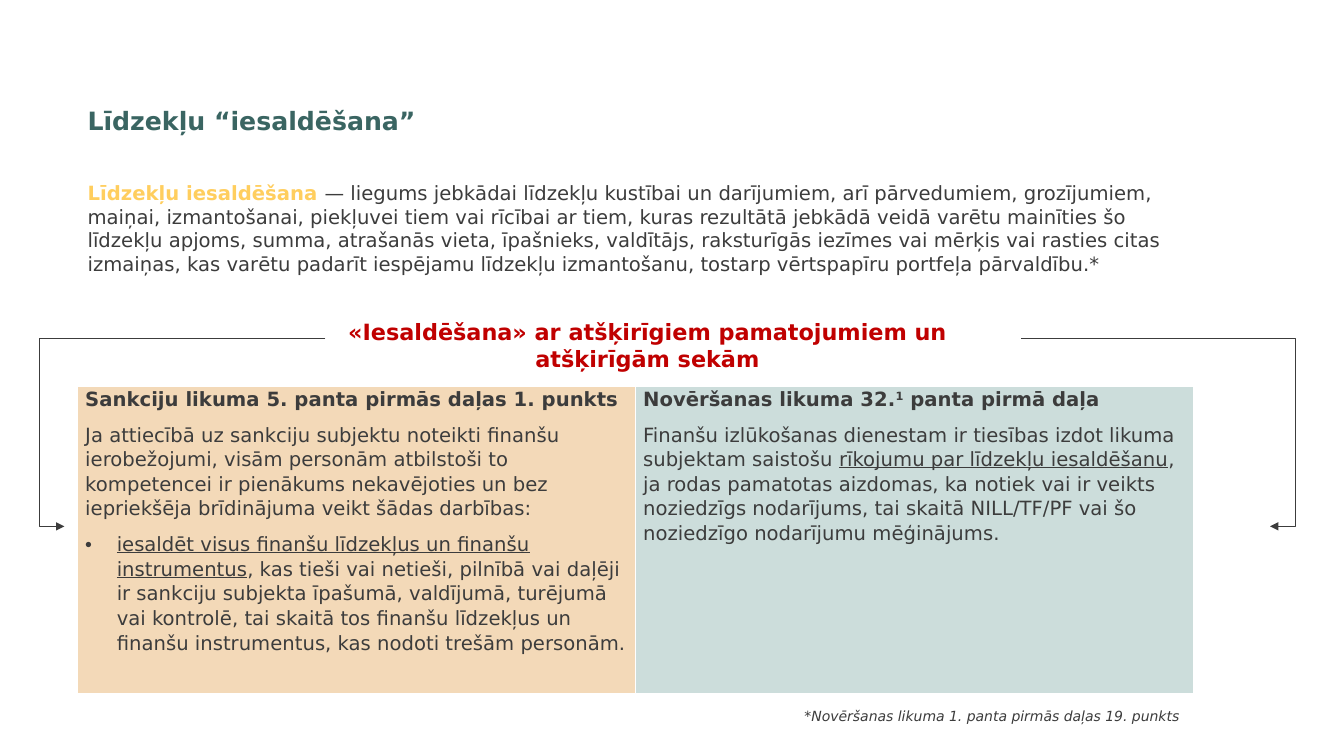
from lxml import etree
from pptx import Presentation
from pptx.dml.color import RGBColor
from pptx.enum import shapes, text
from pptx.oxml import ns
from pptx.util import Pt

FONT = "DejaVu Sans"
GREEN = RGBColor(0x3A, 0x65, 0x62)
YELLOW = RGBColor(0xFF, 0xCE, 0x5E)
GREY = RGBColor(0x3C, 0x3C, 0x3C)
RED = RGBColor(0xC0, 0x00, 0x00)
SAND = RGBColor(0xF3, 0xD9, 0xB8)
MINT = RGBColor(0xCC, 0xDD, 0xDB)
WHITE = RGBColor(0xFF, 0xFF, 0xFF)

SANCTIONS_LAW = [
    [("Sankciju likuma 5. panta pirmās daļas 1. punkts", {"bold": True})],
    [("Ja attiecībā uz sankciju subjektu noteikti finanšu ierobežojumi, visām personām "
      "atbilstoši to kompetencei ir pienākums nekavējoties un bez iepriekšēja brīdinājuma "
      "veikt šādas darbības:", {})],
    [("iesaldēt visus finanšu līdzekļus un finanšu instrumentus", {"underline": True}),
     (", kas tieši vai netieši, pilnībā vai daļēji ir sankciju subjekta īpašumā, valdījumā, "
      "turējumā vai kontrolē, tai skaitā tos finanšu līdzekļus un finanšu instrumentus, "
      "kas nodoti trešām personām.", {})],
]
PREVENTION_LAW = [
    [("Novēršanas likuma 32.", {"bold": True}),
     ("1", {"bold": True, "raised": True}),
     (" panta pirmā daļa", {"bold": True})],
    [("Finanšu izlūkošanas dienestam ir tiesības izdot likuma subjektam saistošu ", {}),
     ("rīkojumu par līdzekļu iesaldēšanu", {"underline": True}),
     (", ja rodas pamatotas aizdomas, ka notiek vai ir veikts noziedzīgs nodarījums, "
      "tai skaitā NILL/TF/PF vai šo noziedzīgo nodarījumu mēģinājums.", {})],
]


def add_element(parent, tag, **attributes):
    """Append a DrawingML element and return it."""
    return etree.SubElement(parent, ns.qn(tag), attributes)


def write(paragraph, words, size=14, color=GREY, bold=False, italic=False,
          underline=False, raised=False):
    """Add formatted words to a paragraph."""
    run = paragraph.add_run()
    run.text = words
    font = run.font
    font.name, font.size = FONT, Pt(size)
    font.bold, font.italic, font.underline = bold, italic, underline
    font.color.rgb = color
    if raised:
        run._r.get_or_add_rPr().set("baseline", "30000")


def text_area(slide, left, top, width, height, align=text.PP_ALIGN.LEFT):
    """Place a wrapping text box and return its first paragraph."""
    frame = slide.shapes.add_textbox(Pt(left), Pt(top), Pt(width), Pt(height)).text_frame
    frame.word_wrap = True
    paragraph = frame.paragraphs[0]
    paragraph.alignment = align
    return paragraph


def definition(slide, left, top, width):
    """Place the slide title and the definition below it."""
    title = text_area(slide, left, top, width, 65)
    title.line_spacing = 0.9
    write(title, "Līdzekļu “iesaldēšana”", size=18, color=GREEN, bold=True)
    meaning = text_area(slide, left, top + 51.8, width, 75)
    write(meaning, "Līdzekļu iesaldēšana ", color=YELLOW, bold=True)
    write(meaning, "— liegums jebkādai līdzekļu kustībai un darījumiem, arī pārvedumiem, "
          "grozījumiem, maiņai, izmantošanai, piekļuvei tiem vai rīcībai ar tiem, kuras "
          "rezultātā jebkādā veidā varētu mainīties šo līdzekļu apjoms, summa, atrašanās "
          "vieta, īpašnieks, valdītājs, raksturīgās iezīmes vai mērķis vai rasties citas "
          "izmaiņas, kas varētu padarīt iespējamu līdzekļu izmantošanu, tostarp "
          "vērtspapīru portfeļa pārvaldību.*")


def law_cell(cell, paragraphs, fill, bulleted=()):
    """Fill one table cell with the text of a law."""
    cell.fill.solid()
    cell.fill.fore_color.rgb = fill
    cell.margin_left = cell.margin_right = Pt(5.4)
    cell.margin_top = cell.margin_bottom = 0
    frame = cell.text_frame
    for index, pieces in enumerate(paragraphs):
        paragraph = frame.add_paragraph() if index else frame.paragraphs[0]
        if index in bulleted:
            properties = paragraph._p.get_or_add_pPr()
            properties.set("marL", str(Pt(22.5)))
            properties.set("indent", str(Pt(-22.5)))
            add_element(properties, "a:buFont", typeface="Arial")
            add_element(properties, "a:buChar", char="•")
        paragraph.line_spacing = 1.07
        paragraph.space_after = Pt(8)
        for words, style in pieces:
            write(paragraph, words, **style)
    cell_properties = cell._tc.get_or_add_tcPr()
    for position, (side, weight) in enumerate([("L", 1), ("R", 1), ("T", 1), ("B", 3)]):
        border = etree.Element(ns.qn(f"a:ln{side}"), w=str(Pt(weight)))
        add_element(add_element(border, "a:solidFill"), "a:srgbClr", val=str(WHITE))
        cell_properties.insert(position, border)


def law_table(slide, left, top, width, height):
    """Place the two laws side by side."""
    table = slide.shapes.add_table(1, 2, Pt(left), Pt(top), Pt(width), Pt(height)).table
    table.first_row = table.horz_banding = False
    law_cell(table.cell(0, 0), SANCTIONS_LAW, SAND, bulleted=(2,))
    law_cell(table.cell(0, 1), PREVENTION_LAW, MINT)


def side_arrow(slide, start, end, top, bottom, overshoot):
    """Bend an arrow from the heading round to the side of the table."""
    arrow = slide.shapes.add_connector(
        shapes.MSO_CONNECTOR.ELBOW, Pt(start), Pt(top), Pt(end), Pt(bottom))
    arrow.line.color.rgb = GREY
    arrow.line.width = Pt(0.5)
    add_element(arrow.line._get_or_add_ln(), "a:tailEnd", type="triangle")
    properties = arrow._element.spPr
    add_element(properties, "a:effectLst")
    bend = round(100000 * (1 + overshoot / abs(end - start)))
    guides = properties.find(ns.qn("a:prstGeom")).get_or_add_avLst()
    add_element(guides, "a:gd", name="adj1", fmla=f"val {bend}")


def comparison(slide, left, top, width, height):
    """Place the heading, the laws, the arrows and the footnote."""
    law_table(slide, left, top, width, height)
    footnote = text_area(slide, left + width - 358.6, top + height + 6, 358.6, 20,
                         text.PP_ALIGN.RIGHT)
    write(footnote, "*Novēršanas likuma 1. panta pirmās daļas 19. punkts ",
          size=10, italic=True)
    for start, end in ((232.5, 46), (729.4, 907.2)):
        side_arrow(slide, start, end, top - 34.6, top + 100, overshoot=18)
    heading = text_area(slide, left + 167, top - 52, 480, 46, text.PP_ALIGN.CENTER)
    write(heading, "«Iesaldēšana» ar atšķirīgiem pamatojumiem un atšķirīgām sekām",
          size=16, color=RED, bold=True)


def main():
    """Build and save the slide."""
    deck = Presentation()
    deck.slide_width, deck.slide_height = Pt(960), Pt(540)
    slide = deck.slides.add_slide(deck.slide_layouts[6])
    definition(slide, 55.5, 74.2, 797)
    comparison(slide, 55.5, 276, 797, 220)
    deck.save("out.pptx")


if __name__ == "__main__":
    main()
